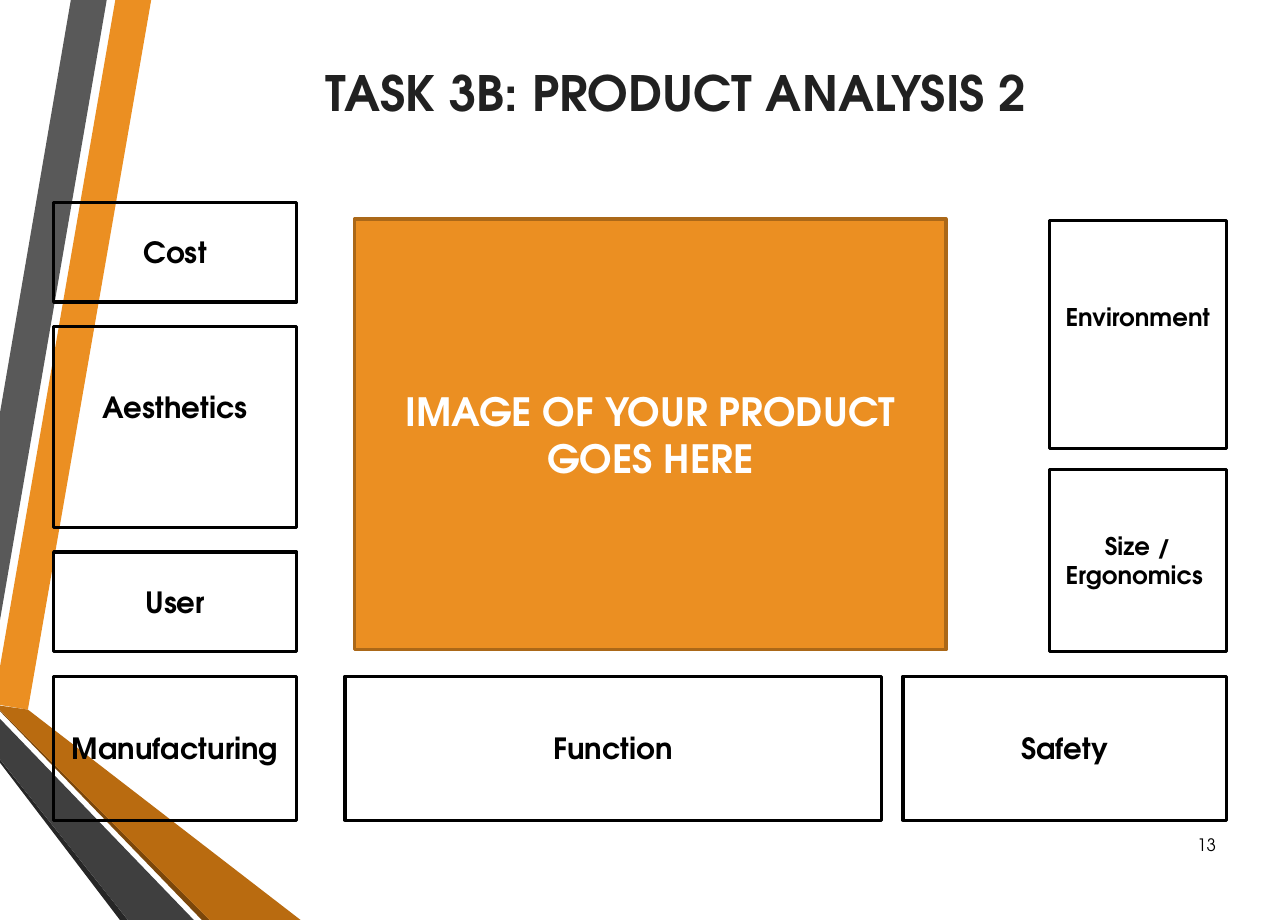
from collections import namedtuple
from pptx import Presentation
from pptx.dml.color import RGBColor
from pptx.enum.shapes import MSO_SHAPE
from pptx.enum.text import MSO_ANCHOR, MSO_AUTO_SIZE, PP_ALIGN
from pptx.util import Cm, Pt

Theme = namedtuple(
    "Theme", "font ink title white orange edge amber brown grey dark coal head hero label small page"
)
theme = Theme(
    font="TeX Gyre Adventor", ink="000000", title="212121", white="FFFFFF",
    orange="EB8F22", edge="AB6818", amber="B96B10", brown="7B470B",
    grey="595959", dark="3F3F3F", coal="262626",
    head=45, hero=36, label=27, small=22.5, page=15.8,
)


def write(shape, text, size, color, bold=True, align=PP_ALIGN.CENTER):
    frame = shape.text_frame
    frame.text = text
    frame.word_wrap = True
    frame.auto_size = MSO_AUTO_SIZE.NONE
    frame.vertical_anchor = MSO_ANCHOR.MIDDLE
    line = frame.paragraphs[0]
    line.alignment = align
    font = line.runs[0].font
    font.name, font.size, font.bold = theme.font, Pt(size), bold
    font.color.rgb = RGBColor.from_string(color)
    return frame


def add_box(text, left, top, width, height, size=theme.label, color=theme.ink, edge=theme.ink):
    box = slide.shapes.add_shape(MSO_SHAPE.RECTANGLE, Cm(left), Cm(top), Cm(width), Cm(height))
    box.shadow.inherit = False
    box.fill.background()
    box.line.color.rgb = RGBColor.from_string(edge)
    box.line.width = Pt(3)
    write(box, text, size, color)
    return box


deck = Presentation()
deck.slide_width, deck.slide_height = Cm(41.99), Cm(30)
slide = deck.slides.add_slide(deck.slide_layouts[5])

bands = [
    (theme.orange, [(0, 2174), (0, 2299), (91, 2314), (493, 0), (376, 0)]),
    (theme.grey, [(348, 0), (231, 0), (0, 1346), (0, 2022)]),
    (theme.coal, [(0, 2476), (0, 2487), (391, 3000), (417, 3000)]),
    (theme.brown, [(0, 2316), (0, 2319), (658, 3000), (683, 3000)]),
    (theme.amber, [(0, 2316), (683, 3000), (980, 3000), (91, 2314), (0, 2301)]),
    (theme.dark, [(0, 2476), (417, 3000), (632, 3000), (0, 2344)]),
]
for color, points in bands:
    path = slide.shapes.build_freeform(*points[0], scale=Cm(0.01))
    path.add_line_segments(points[1:], close=True)
    band = path.convert_to_shape()
    band.shadow.inherit = False
    band.fill.solid()
    band.fill.fore_color.rgb = RGBColor.from_string(color)
    band.line.fill.background()

title = slide.shapes.title
title.left, title.top, title.width, title.height = Cm(5.33), Cm(2.08), Cm(33.4), Cm(2.26)
frame = write(title, "TASK 3B: PRODUCT ANALYSIS 2", theme.head, theme.title)
frame.vertical_anchor = MSO_ANCHOR.TOP
frame.margin_left = frame.margin_right = Cm(0.38)
frame.margin_top = frame.margin_bottom = Cm(0.18)
frame.paragraphs[0].line_spacing = 0.9

columns = [
    (1.75, 6.6, 7.92, 0.8, theme.label, [
        ("Cost", 3.25, 0), ("Aesthetics", 6.55, 1.3), ("User", 3.25, 0), ("Manufacturing", 4.7, 0),
    ]),
    (34.21, 7.19, 5.77, 0.69, theme.small, [
        ("Environment", 7.44, 1.15), ("Size / Ergonomics ", 5.92, 0),
    ]),
]
for left, top, width, gap, size, items in columns:
    for text, height, lift in items:
        box = add_box(text, left, top, width, height, size)
        box.text_frame.margin_bottom = Cm(0.13 + lift)
        top += height + gap

add_box("Function", 11.25, 22.05, 17.48, 4.7)
add_box("Safety", 29.44, 22.05, 10.54, 4.7)

hero = add_box("IMAGE OF YOUR PRODUCT GOES HERE", 11.56, 7.14, 19.28, 14.05,
               theme.hero, theme.white, theme.edge)
hero.fill.solid()
hero.fill.fore_color.rgb = RGBColor.from_string(theme.orange)

page = slide.shapes.add_textbox(Cm(38), Cm(26.75), Cm(1.9), Cm(1.6))
write(page, "13", theme.page, theme.ink, False, PP_ALIGN.RIGHT)

deck.save("out.pptx")
